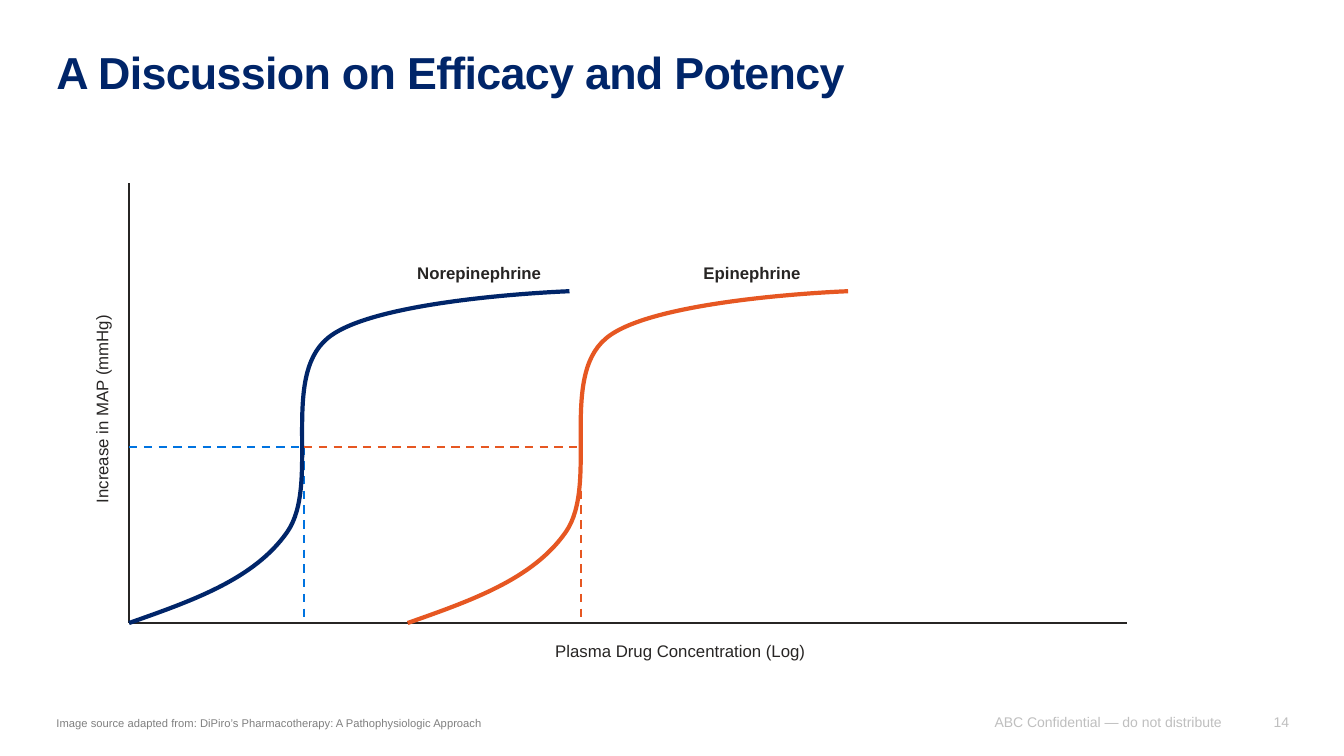
from lxml.etree import SubElement
from pptx import Presentation
from pptx.dml.color import RGBColor
from pptx.enum.dml import MSO_LINE_DASH_STYLE as Dash
from pptx.enum.shapes import MSO_CONNECTOR as Connector
from pptx.enum.text import MSO_ANCHOR as Anchor, PP_ALIGN as Align
from pptx.oxml.ns import qn
from pptx.util import Pt

COLORS = {
    "navy": "002569", "blue": "0073E0", "orange": "E65722",
    "ink": "272524", "grey": "808080", "pale": "BFBFBF",
}
TITLE = "A Discussion on Efficacy and Potency"
SOURCE = "Image source adapted from: DiPiro’s Pharmacotherapy: A Pathophysiologic Approach"
FOOTERS = [
    ("14", (884.9, 502.6, 36, 19.4)),
    ("ABC Confidential — do not distribute", (696.2, 502.6, 176.4, 19.4)),
]
X_TITLE = "Plasma Drug Concentration (Log)"
Y_TITLE = "Increase in MAP (mmHg)"
DRUGS = [
    {"name": "Norepinephrine", "label_left": 290.9, "start": 0, "guide_from": 0,
     "half_dose": 124.8, "curve": "navy", "guide": "blue", "guides_on_top": False},
    {"name": "Epinephrine", "label_left": 495.4, "start": 199, "guide_from": 125,
     "half_dose": 322.7, "curve": "orange", "guide": "orange", "guides_on_top": True},
]
ORIGIN_X, ORIGIN_Y = 92.2, 445
AXIS_TOP, AXIS_RIGHT = 131, 805
HALF_EFFECT_Y = 319
RESPONSE = [
    (44.6, 15.8), (89.3, 31), (113, 65),
    (136.8, 99.4), (108, 175), (141.6, 203.2),
    (175, 232), (314.6, 237), (314.6, 237),
]

deck = Presentation()
deck.slide_width, deck.slide_height = Pt(960), Pt(540)
slide = deck.slides.add_slide(deck.slide_layouts[6])


def rgb(color):
    return RGBColor.from_string(COLORS[color])


def add_text(text, box, size, color, bold=False, inset=(7.2, 3.6),
             anchor=Anchor.TOP, align=Align.LEFT):
    label = slide.shapes.add_textbox(*map(Pt, box))
    frame = label.text_frame
    frame.word_wrap = True
    frame.vertical_anchor = anchor
    frame.margin_left = frame.margin_right = Pt(inset[0])
    frame.margin_top = frame.margin_bottom = Pt(inset[1])
    paragraph = frame.paragraphs[0]
    paragraph.alignment = align
    run = paragraph.add_run()
    run.text = text
    run.font.name, run.font.size, run.font.bold = "Arial", Pt(size), bold
    run.font.color.rgb = rgb(color)
    return label


def add_line(start, end, color, dashed=False):
    line = slide.shapes.add_connector(Connector.STRAIGHT, *map(Pt, start + end))
    line.line.color.rgb = rgb(color)
    line.line.width = Pt(1.5)
    if dashed:
        line.line.dash_style = Dash.DASH
    SubElement(line._element.spPr, qn("a:effectLst"))


def bend_segments(curve):
    outline = next(curve._element.iter(qn("a:path")))
    segments = outline.findall(qn("a:lnTo"))
    for first in range(0, len(segments), 3):
        bend = SubElement(outline, qn("a:cubicBezTo"))
        for segment in segments[first:first + 3]:
            bend.append(segment[0])
            outline.remove(segment)


def add_curve(start, color):
    left = ORIGIN_X + start
    builder = slide.shapes.build_freeform(Pt(left), Pt(ORIGIN_Y))
    builder.add_line_segments([(Pt(left + x), Pt(ORIGIN_Y - y)) for x, y in RESPONSE], close=False)
    curve = builder.convert_to_shape()
    bend_segments(curve)
    curve.shadow.inherit = False
    curve.fill.background()
    curve.line.color.rgb = rgb(color)
    curve.line.width = Pt(3)


def add_guides(drug):
    dose_x = ORIGIN_X + drug["half_dose"]
    add_line((ORIGIN_X + drug["guide_from"], HALF_EFFECT_Y), (dose_x, HALF_EFFECT_Y), drug["guide"], True)
    add_line((dose_x, HALF_EFFECT_Y), (dose_x, ORIGIN_Y), drug["guide"], True)


for footer, box in FOOTERS:
    add_text(footer, box, 10, "pale", inset=(0, 0), anchor=Anchor.BOTTOM, align=Align.RIGHT)
source = add_text(SOURCE, (40.3, 501.8, 349.2, 19.4), 8, "grey", inset=(0, 0), anchor=Anchor.BOTTOM)
source.text_frame.paragraphs[0].space_after = Pt(6)
title = add_text(TITLE, (40.3, 36, 880.6, 43.9), 32, "navy", True, inset=(0, 0))
heading = title.text_frame.paragraphs[0]
heading.line_spacing = 0.9
heading.runs[0]._r.get_or_add_rPr().set("spc", "-50")

add_line((ORIGIN_X, AXIS_TOP), (ORIGIN_X, ORIGIN_Y), "ink")
add_line((AXIS_RIGHT, ORIGIN_Y), (ORIGIN_X, ORIGIN_Y), "ink")
add_text(Y_TITLE, (-2.9, 280.1, 151.2, 21.8), 12, "ink").rotation = 270
add_text(X_TITLE, (389.5, 454.3, 229, 21.8), 12, "ink")

for drug in DRUGS:
    if not drug["guides_on_top"]:
        add_guides(drug)
    add_curve(drug["start"], drug["curve"])
    if drug["guides_on_top"]:
        add_guides(drug)
    add_text(drug["name"], (drug["label_left"], 184.3, 123.8, 21.8), 12, "ink", True)

deck.save("out.pptx")
